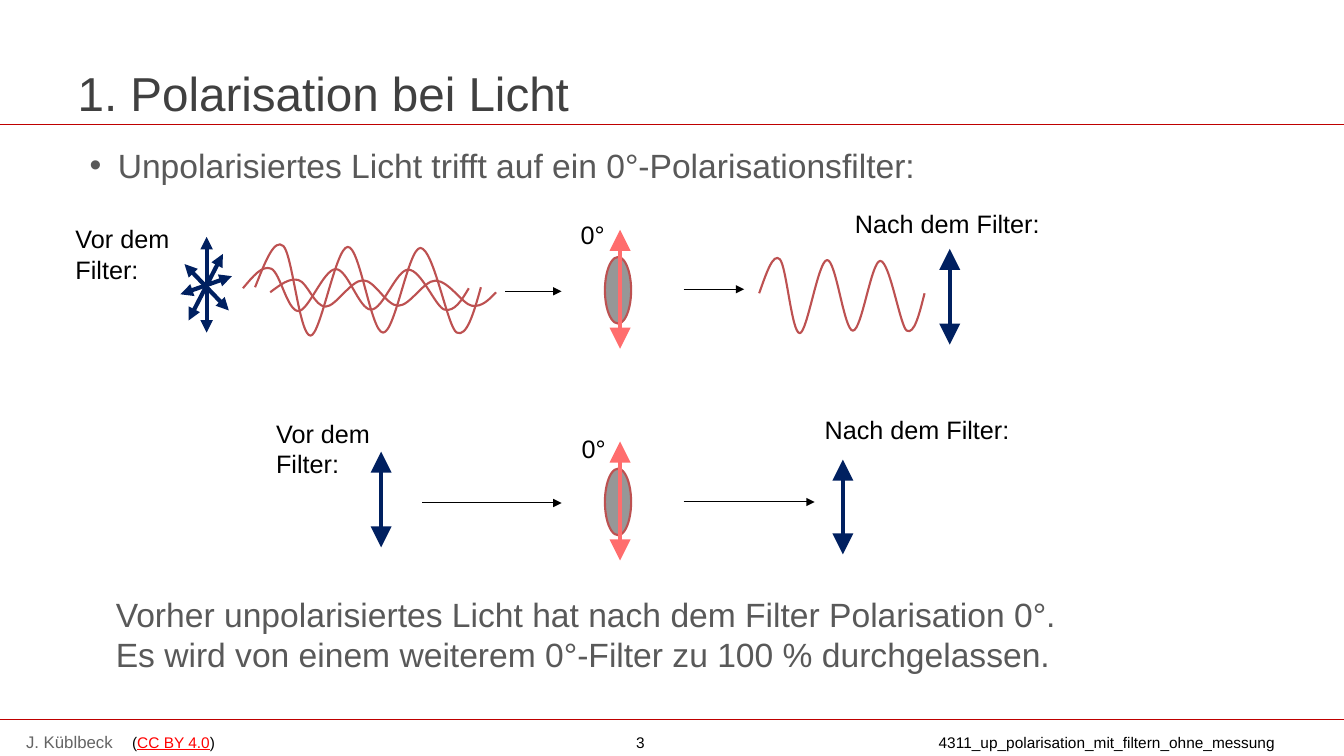
from lxml import etree
from pptx import Presentation
from pptx.dml.color import RGBColor
from pptx.enum.shapes import MSO_CONNECTOR, MSO_SHAPE
from pptx.enum.text import MSO_ANCHOR, MSO_AUTO_SIZE, PP_ALIGN
from pptx.oxml.ns import qn
from pptx.util import Inches, Pt

STRAIGHT = MSO_CONNECTOR.STRAIGHT
OVAL = MSO_SHAPE.OVAL
MIDDLE = MSO_ANCHOR.MIDDLE
TOP = MSO_ANCHOR.TOP
LEFT = PP_ALIGN.LEFT
NO_AUTOFIT = MSO_AUTO_SIZE.NONE

BLACK = RGBColor(0x00, 0x00, 0x00)
TITLE_GREY = RGBColor(0x40, 0x40, 0x40)
TEXT_GREY = RGBColor(0x59, 0x59, 0x59)
AUTHOR_GREY = RGBColor(0x64, 0x64, 0x64)
LENS_GREY = RGBColor(0x97, 0x97, 0x97)
RULE_RED = RGBColor(0xBF, 0x00, 0x00)
LINK_RED = RGBColor(0xFF, 0x00, 0x00)
WAVE_RED = RGBColor(0xBD, 0x51, 0x51)
FILTER_RED = RGBColor(0xFF, 0x6D, 0x6D)
NAVY = RGBColor(0x00, 0x20, 0x60)

FONT = "Arial"
# Bézier points of the wave: x from its start, y from its baseline
WAVE_LENGTH, WAVE_HEIGHT = 2.24, 0.91
WAVE = [
    (0, 0), (0.1, -0.25), (0.19, -0.49), (0.28, -0.41),
    (0.37, -0.33), (0.44, 0.48), (0.55, 0.48),
    (0.65, 0.48), (0.8, -0.4), (0.92, -0.4),
    (1.04, -0.41), (1.15, 0.45), (1.27, 0.45),
    (1.39, 0.45), (1.52, -0.39), (1.64, -0.39),
    (1.77, -0.39), (1.91, 0.4), (2, 0.45),
    (2.1, 0.5), (2.17, 0.25), (2.24, 0),
]


def write(tf, text, size=18, color=BLACK, anchor=TOP, inset=None,
          space_before=0, underlined=None):
    """Fill a text frame; the part of the text equal to underlined becomes a red underlined run."""
    tf.word_wrap = True
    tf.auto_size = NO_AUTOFIT
    tf.vertical_anchor = anchor
    if inset is not None:
        tf.margin_left = tf.margin_right = tf.margin_top = tf.margin_bottom = inset
    p = tf.paragraphs[0]
    p.alignment = LEFT
    p.space_before = Pt(space_before)
    for number, line in enumerate(text.split("\n")):
        if number:
            p.add_line_break()
        before, found, after = line.partition(underlined) if underlined else (line, "", "")
        for part in filter(None, (before, found, after)):
            r = p.add_run()
            r.text = part
            r.font.name = FONT
            r.font.size = Pt(size)
            r.font.underline = part == underlined
            r.font.color.rgb = LINK_RED if part == underlined else color
    return p


def add_text(s, text, left, top, width, height, **fmt):
    box = s.shapes.add_textbox(Inches(left), Inches(top), Inches(width), Inches(height))
    return write(box.text_frame, text, **fmt)


def indent(p, margin, first=0, bullet=None):
    pPr = p._p.get_or_add_pPr()
    pPr.set("marL", str(Inches(margin)))
    pPr.set("indent", str(Inches(first)))
    if bullet:
        etree.SubElement(pPr, qn("a:buFont")).set("typeface", FONT)
        etree.SubElement(pPr, qn("a:buChar")).set("char", bullet)


def set_tabs(p, *stops):
    tabs = etree.SubElement(p._p.get_or_add_pPr(), qn("a:tabLst"))
    for stop in stops:
        tab = etree.SubElement(tabs, qn("a:tab"))
        tab.set("pos", str(Inches(stop)))
        tab.set("algn", "l")


def add_line(s, x1, y1, x2, y2, color=BLACK, width=0.75, ends=(), head="med"):
    """Draw a line; ends may name headEnd (start) and tailEnd (end) for arrowheads."""
    line = s.shapes.add_connector(STRAIGHT, Inches(x1), Inches(y1), Inches(x2), Inches(y2))
    line.line.color.rgb = color
    line.line.width = Pt(width)
    ln = line.line._get_or_add_ln()
    for end in ends:
        arrowhead = etree.SubElement(ln, qn(f"a:{end}"))
        arrowhead.set("type", "triangle")
        arrowhead.set("w", head)
        arrowhead.set("len", head)
    etree.SubElement(line._element.spPr, qn("a:effectLst"))


def add_ray(s, x1, x2, y):
    add_line(s, x1, y, x2, y, ends=("tailEnd",))


def add_double_arrow(s, x1, y1, x2, y2, color=NAVY, head="lg"):
    add_line(s, x1, y1, x2, y2, color, 3, ("headEnd", "tailEnd"), head)


def outline(sp):
    sp.shadow.inherit = False
    sp.line.color.rgb = WAVE_RED
    sp.line.width = Pt(1.5)


def add_filter(s, top, label_left, label_top):
    """Polarisation filter: lens, its direction and the angle label."""
    sp = s.shapes.add_shape(OVAL, Inches(6), Inches(top + 0.27), Inches(0.26), Inches(0.66))
    sp.fill.solid()
    sp.fill.fore_color.rgb = LENS_GREY
    outline(sp)
    add_double_arrow(s, 6.15, top, 6.15, top + 1.18, FILTER_RED)
    add_text(s, "0°", label_left, label_top, 0.46, 0.4)


def add_wave(s, left, baseline, length, height):
    sx, sy = length / WAVE_LENGTH, height / WAVE_HEIGHT
    points = [(Inches(left + sx * x), Inches(baseline + sy * y)) for x, y in WAVE]
    builder = s.shapes.build_freeform(*points[0])
    builder.add_line_segments(points[1:], close=False)
    sp = builder.convert_to_shape()
    segments = list(sp._element.iter(qn("a:lnTo")))
    for i in range(0, len(segments), 3):
        curve = etree.SubElement(segments[i].getparent(), qn("a:cubicBezTo"))
        for segment in segments[i:i + 3]:
            curve.append(segment[0])
            segment.getparent().remove(segment)
    sp.fill.background()
    outline(sp)


def add_title(s, text):
    title = s.shapes.title
    title.left, title.top = Inches(0.67), Inches(0.6)
    title.width, title.height = Inches(12), Inches(0.63)
    write(title.text_frame, text, size=34, color=TITLE_GREY, anchor=MIDDLE)


def add_frame(s):
    """Rules and footer."""
    for y in (1.24, 7.14):
        add_line(s, 0, y, 13.33, y, RULE_RED)
    add_text(s, "J. Küblbeck", 0.16, 7.21, 1.55, 0.3, size=12, color=AUTHOR_GREY)
    p = add_text(s, "(CC BY 4.0)\t3\t4311_up_polarisation_mit_filtern_ohne_messung",
                 1.31, 7.27, 11.81, 0.19, size=11, inset=0, underlined="CC BY 4.0")
    set_tabs(p, 5, 8)


def add_unpolarised_row(s):
    add_text(s, "Vor dem\nFilter:", 0.65, 2.17, 1.22, 0.71)
    for ends in [(2.05, 2.35, 2.05, 3.3), (2.21, 2.52, 1.87, 3.18),
                 (2.3, 2.74, 1.79, 2.92), (1.83, 2.62, 2.27, 3.08)]:
        add_double_arrow(s, *ends, head="med")
    for left, baseline, height in [(2.53, 2.85, 0.91), (2.41, 2.86, 0.43), (2.68, 2.9, 0.27)]:
        add_wave(s, left, baseline, WAVE_LENGTH, height)
    add_ray(s, 5.01, 5.57, 2.89)
    add_filter(s, 2.28, 5.66, 2.13)
    add_ray(s, 6.78, 7.38, 2.87)
    add_wave(s, 7.53, 2.91, 1.64, 0.75)
    add_double_arrow(s, 9.42, 2.47, 9.42, 3.42)
    add_text(s, "Nach dem Filter:", 8.38, 2.02, 2.09, 0.4)


def add_polarised_row(s):
    add_text(s, "Vor dem\nFilter:", 2.64, 4.1, 1.22, 0.71)
    add_double_arrow(s, 3.78, 4.48, 3.78, 5.43)
    add_ray(s, 4.19, 5.57, 4.99)
    add_filter(s, 4.38, 5.67, 4.25)
    add_ray(s, 6.78, 8.08, 4.98)
    add_double_arrow(s, 8.36, 4.56, 8.36, 5.5)
    add_text(s, "Nach dem Filter:", 8.08, 4.06, 2.09, 0.4)


def main():
    prs = Presentation()
    prs.slide_width, prs.slide_height = Inches(13.33), Inches(7.5)
    s = prs.slides.add_slide(prs.slide_layouts[5])
    add_frame(s)
    add_title(s, "1. Polarisation bei Licht")
    p = add_text(s, "Unpolarisiertes Licht trifft auf ein 0°-Polarisationsfilter:",
                 0.67, 1.39, 12, 5.51, size=24, color=TEXT_GREY, space_before=3)
    indent(p, 0.4, -0.28, "•")
    add_unpolarised_row(s)
    add_polarised_row(s)
    p = add_text(s, "Vorher unpolarisiertes Licht hat nach dem Filter Polarisation 0°.\n"
                 "Es wird von einem weiterem 0°-Filter zu 100 % durchgelassen.",
                 0.6, 5.84, 12, 1.34, size=24, color=TEXT_GREY, space_before=3)
    indent(p, 0.45)
    prs.save("out.pptx")


if __name__ == "__main__":
    main()
